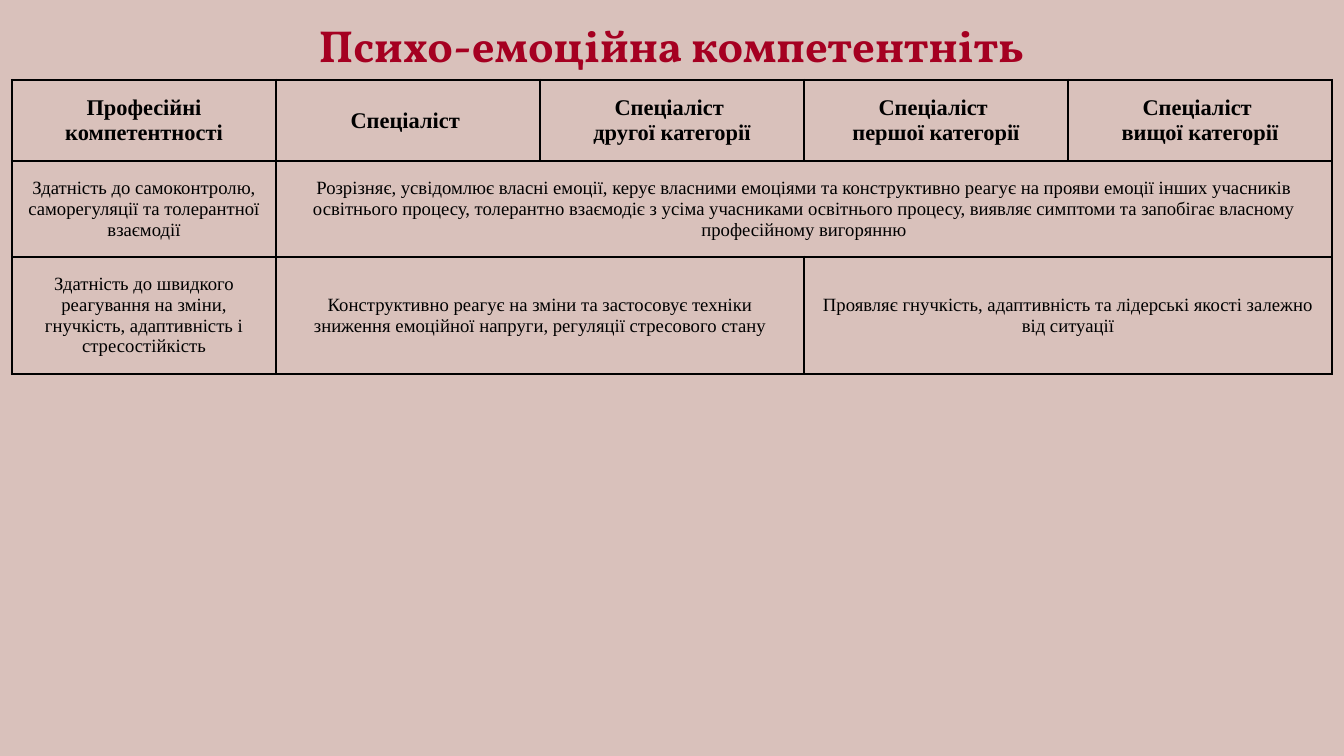
from dataclasses import dataclass

from lxml.etree import SubElement
from pptx import Presentation
from pptx.dml.color import RGBColor
from pptx.enum.text import MSO_ANCHOR, MSO_AUTO_SIZE, PP_ALIGN
from pptx.oxml.ns import qn
from pptx.util import Emu, Pt

SCALE = 914400 / 67.2
COLORS = {"back": "D9C1BB", "title": "A50021", "ink": "000000"}
BODY_FONT = "Times New Roman"
COLS, COL_W = 5, 264
ROWS = [81, 96, 117]
PAD = 14
LINE_PT = 3


@dataclass
class Entry:
    row: int
    col: int
    text: str
    span: int = 1


ENTRIES = [
    Entry(0, 0, "Професійні компетентності"),
    Entry(0, 1, "Спеціаліст "),
    Entry(0, 2, "Спеціаліст \nдругої категорії"),
    Entry(0, 3, "Спеціаліст \nпершої категорії"),
    Entry(0, 4, "Спеціаліст \nвищої категорії"),
    Entry(1, 0, "Здатність до самоконтролю, саморегуляції та толерантної взаємодії"),
    Entry(1, 1, "Розрізняє, усвідомлює власні емоції, керує власними емоціями та "
                "конструктивно реагує на прояви емоції інших учасників освітнього "
                "процесу, толерантно взаємодіє з усіма учасниками освітнього процесу, "
                "виявляє симптоми та запобігає власному професійному вигорянню", 4),
    Entry(2, 0, "Здатність до швидкого реагування на зміни, гнучкість, "
                "адаптивність і стресостійкість"),
    Entry(2, 1, "Конструктивно реагує на зміни та застосовує техніки зниження "
                "емоційної напруги, регуляції стресового стану", 2),
    Entry(2, 3, "Проявляє гнучкість, адаптивність та лідерські якості залежно "
                "від ситуації", 2),
]


def px(count: int) -> Emu:
    return Emu(round(count * SCALE))


def style(frame, font: str, size: int, color: str, bold: bool) -> None:
    for para in frame.paragraphs:
        para.alignment = PP_ALIGN.CENTER
        for run in para.runs:
            run.font.name = font
            run.font.size = Pt(size)
            run.font.bold = bold
            run.font.color.rgb = RGBColor.from_string(COLORS[color])


def border(cell) -> None:
    props = cell._tc.get_or_add_tcPr()
    for spot, side in enumerate(("lnL", "lnR", "lnT", "lnB")):
        line = SubElement(props, qn(f"a:{side}"), w=str(Pt(LINE_PT)))
        fill = SubElement(line, qn("a:solidFill"))
        SubElement(fill, qn("a:srgbClr"), val=COLORS["ink"])
        props.insert(spot, line)  # borders come before the fill


def draw_title(slide) -> None:
    box = slide.shapes.add_textbox(px(75), px(12), px(1193), px(60))
    frame = box.text_frame
    frame.word_wrap = True
    frame.auto_size = MSO_AUTO_SIZE.SHAPE_TO_FIT_TEXT
    frame.margin_left = frame.margin_right = 0
    frame.margin_top = frame.margin_bottom = 0
    frame.text = "Психо-емоційна компетентніть"
    frame.paragraphs[0].line_spacing = 1.1
    style(frame, "Vollkorn", 48, "title", True)


def draw_table(slide) -> None:
    table = slide.shapes.add_table(len(ROWS), COLS, px(12), px(80),
                                   px(COLS * COL_W), px(sum(ROWS))).table
    table.first_row = table.horz_banding = False
    for col in table.columns:
        col.width = px(COL_W)
    for row, high in zip(table.rows, ROWS):
        row.height = px(high)

    # Clear fill, black grid and even padding in every cell
    for cell in table.iter_cells():
        cell.fill.background()
        border(cell)
        cell.vertical_anchor = MSO_ANCHOR.MIDDLE
        cell.margin_left = cell.margin_right = px(PAD)
        cell.margin_top = cell.margin_bottom = px(PAD)

    # Wording, with merged cells where one text serves several levels
    for item in ENTRIES:
        cell = table.cell(item.row, item.col)
        if item.span > 1:
            cell.merge(table.cell(item.row, item.col + item.span - 1))
        cell.text_frame.text = item.text
        head = item.row == 0
        style(cell.text_frame, BODY_FONT, 24 if head else 20, "ink", head)


def main() -> None:
    deck = Presentation()
    deck.slide_width, deck.slide_height = px(1344), px(756)
    slide = deck.slides.add_slide(deck.slide_layouts[6])
    back = slide.background.fill
    back.solid()
    back.fore_color.rgb = RGBColor.from_string(COLORS["back"])
    draw_table(slide)
    draw_title(slide)
    deck.save("out.pptx")


if __name__ == "__main__":
    main()
